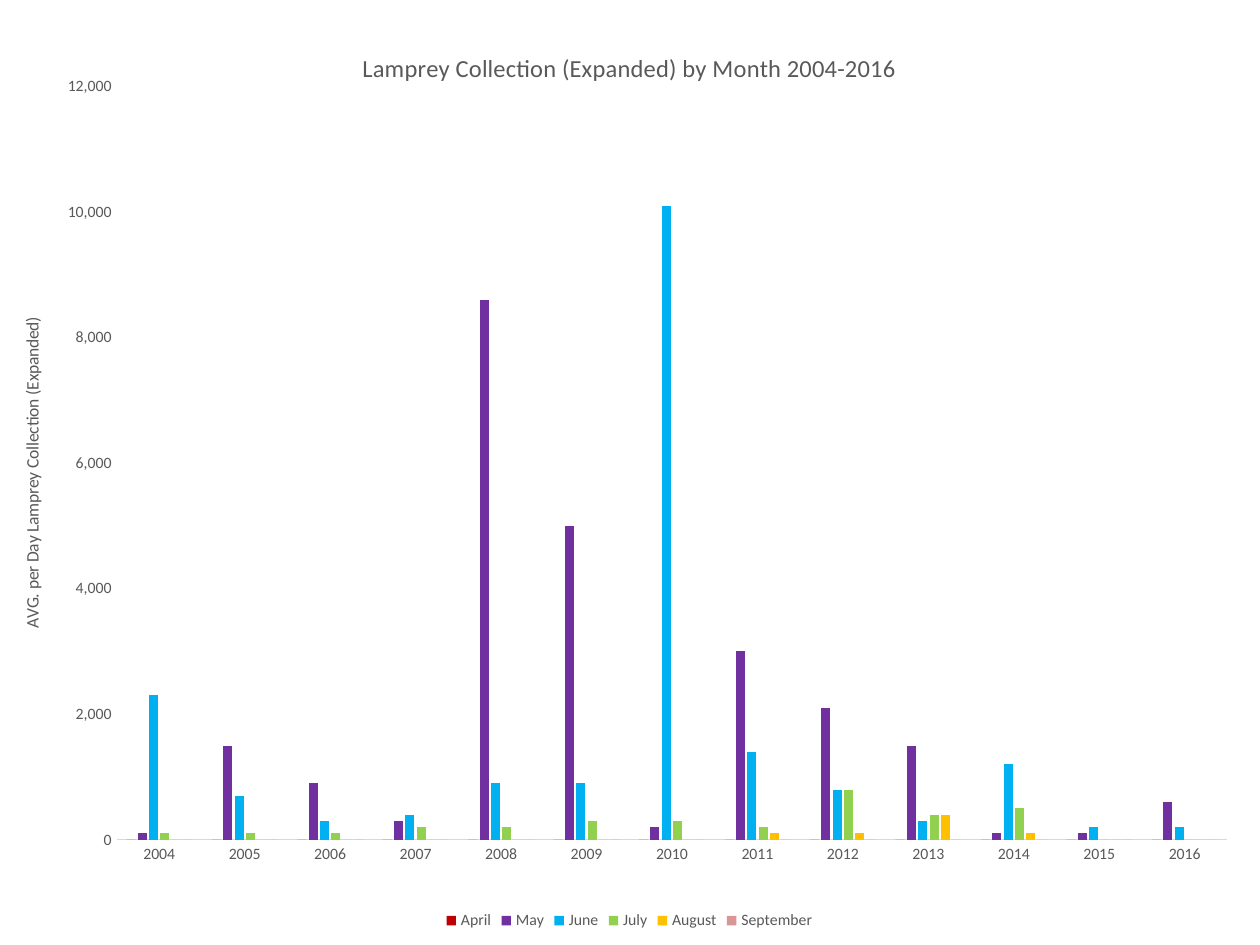
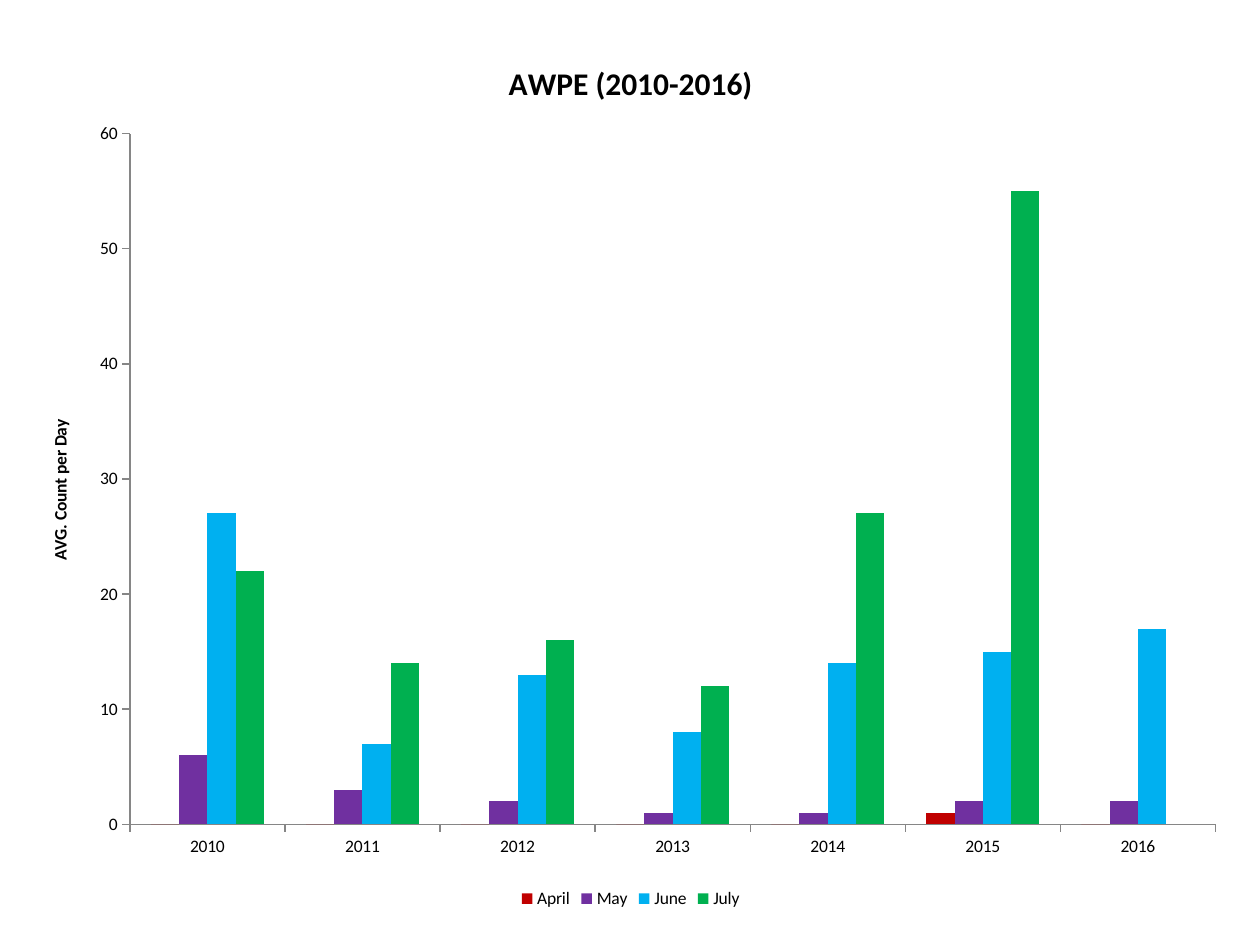
from lxml import etree
from pptx import Presentation
from pptx.chart.data import CategoryChartData
from pptx.dml.color import RGBColor
from pptx.enum.chart import XL_CHART_TYPE, XL_LEGEND_POSITION, XL_TICK_MARK
from pptx.oxml.ns import qn
from pptx.util import Inches, Pt

COLUMNS = XL_CHART_TYPE.COLUMN_CLUSTERED
BOTTOM = XL_LEGEND_POSITION.BOTTOM
NO_TICK, OUT_TICK = XL_TICK_MARK.NONE, XL_TICK_MARK.OUTSIDE
FONT = "Calibri"
COLORS = {
    "text": "000000", "muted": "595959", "pale line": "D9D9D9", "axis line": "868686",
    "April": "C00000", "May": "7030A0", "June": "00B0F0", "July": "92D050",
    "August": "FFC000", "September": "D99694", "deep green": "00B050",
}

# Content: one dict per slide; plot and axis title places are shares of the chart
CHARTS = [
    {
        "title": "Lamprey Collection (Expanded) by Month 2004-2016",
        "axis_title": "AVG. per Day Lamprey Collection (Expanded)",
        "box": (0.08, 0.17, 9.83, 7.25),
        "plot": (0.086, 0.071, 0.897, 0.825),
        "axis_title_at": (0.006, 0.32),
        "years": range(2004, 2017),
        "series": {
            "April": [0] * 13,
            "May": [100, 1500, 900, 300, 8600, 5000, 200, 3000, 2100, 1500, 100, 100, 600],
            "June": [2300, 700, 300, 400, 900, 900, 10100, 1400, 800, 300, 1200, 200, 200],
            "July": [100, 100, 100, 200, 200, 300, 300, 200, 800, 400, 500, 0, 0],
            "August": [0, 0, 0, 0, 0, 0, 0, 100, 100, 400, 100, 0, 0],
            "September": [0] * 13,
        },
        "recolor": {},
        "scale": (12000, 2000), "format": "#,##0",
        "gap": 219, "overlap": -27, "tick": NO_TICK,
        "text": "muted", "bold": False, "sizes": (14, 10, 9),
        "cat_line": "pale line", "val_line": None,
    },
    {
        "title": "AWPE (2010-2016)",
        "axis_title": "AVG. Count per Day",
        "box": (0.17, 0.25, 9.67, 7),
        "plot": (0.089, 0.116, 0.891, 0.783),
        "axis_title_at": None,
        "years": range(2010, 2017),
        "series": {
            "April": [0, 0, 0, 0, 0, 1, 0],
            "May": [6, 3, 2, 1, 1, 2, 2],
            "June": [27, 7, 13, 8, 14, 15, 17],
            "July": [22, 14, 16, 12, 27, 55, None],
        },
        "recolor": {"July": "deep green"},
        "scale": (60, 10), "format": "0",
        "gap": 150, "overlap": 0, "tick": OUT_TICK,
        "text": "text", "bold": True, "sizes": (18, 10, 10),
        "cat_line": "axis line", "val_line": "axis line",
    },
]


def rgb(name):
    return RGBColor.from_string(COLORS[name])


def set_font(font, size, color, bold=False):
    font.name, font.size, font.bold = FONT, Pt(size), bold
    font.color.rgb = rgb(color)


def write_title(title, text, size, look):
    tf = title.text_frame
    tf.text = text
    set_font(tf.paragraphs[0].font, size, look["text"], look["bold"])


def place(parent, index, shares, inner=False):
    """Give a chart part a manual layout: x, y and, if given, w, h."""
    layout = parent.find(qn("c:layout"))
    if layout is None:
        layout = etree.Element(qn("c:layout"))
        parent.insert(index, layout)
    manual = etree.SubElement(layout, qn("c:manualLayout"))
    values = [("layoutTarget", "inner")] if inner else []
    values += [("xMode", "edge"), ("yMode", "edge")]
    values += zip("xywh", shares)
    for tag, value in values:
        etree.SubElement(manual, qn("c:" + tag)).set("val", str(value))


def style_axis(axis, look, line):
    axis.has_major_gridlines = False
    axis.major_tick_mark, axis.minor_tick_mark = look["tick"], NO_TICK
    set_font(axis.tick_labels.font, look["sizes"][2], look["text"])
    if line:
        axis.format.line.color.rgb = rgb(line)
        axis.format.line.width = Pt(0.75)
    else:
        axis.format.line.fill.background()


def add_column_chart(slide, look):
    data = CategoryChartData()
    data.categories = [str(year) for year in look["years"]]
    for month, values in look["series"].items():
        data.add_series(month, values)
    box = [Inches(v) for v in look["box"]]
    chart = slide.shapes.add_chart(COLUMNS, *box, data).chart
    title_size, axis_title_size, label_size = look["sizes"]
    set_font(chart.font, 10, "text")
    write_title(chart.chart_title, look["title"], title_size, look)

    # Columns
    plot = chart.plots[0]
    plot.gap_width, plot.overlap, plot.vary_by_categories = look["gap"], look["overlap"], False
    for series in plot.series:
        series.format.fill.solid()
        series.format.fill.fore_color.rgb = rgb(look["recolor"].get(series.name, series.name))

    # Axes
    val = chart.value_axis
    style_axis(chart.category_axis, look, look["cat_line"])
    style_axis(val, look, look["val_line"])
    val.minimum_scale = 0
    val.maximum_scale, val.major_unit = look["scale"]
    val.tick_labels.number_format = look["format"]
    val.tick_labels.number_format_is_linked = False
    write_title(val.axis_title, look["axis_title"], axis_title_size, look)
    if look["axis_title_at"]:
        place(val.axis_title._element, 1, look["axis_title_at"])
    place(chart._chartSpace.chart.plotArea, 0, look["plot"], inner=True)

    # Legend
    chart.has_legend = True
    chart.legend.position = BOTTOM
    chart.legend.include_in_layout = False
    set_font(chart.legend.font, label_size, look["text"])


def main():
    prs = Presentation()
    prs.slide_width, prs.slide_height = Inches(10), Inches(7.5)
    for look in CHARTS:
        add_column_chart(prs.slides.add_slide(prs.slide_layouts[6]), look)
    prs.save("out.pptx")


if __name__ == "__main__":
    main()
